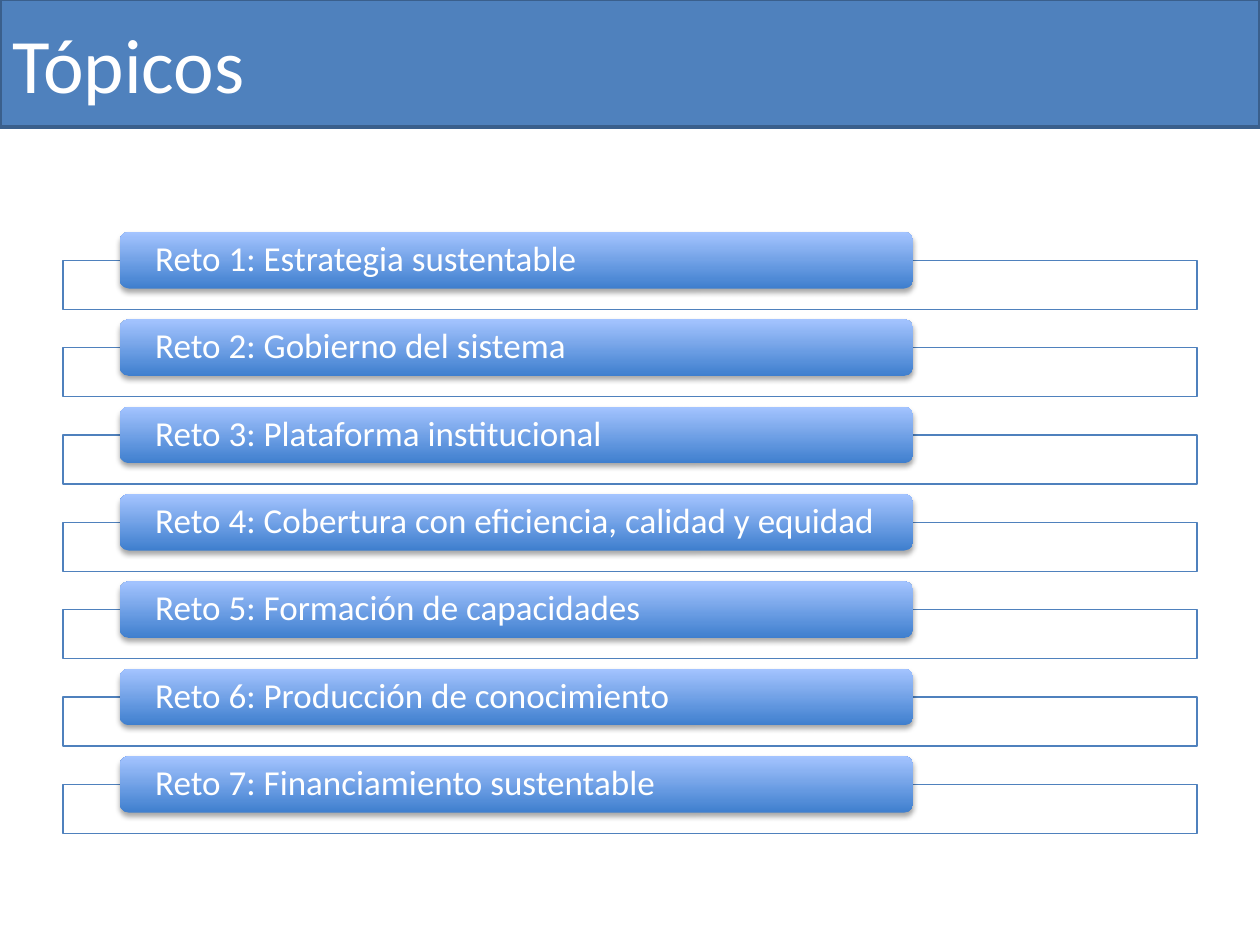
from lxml.etree import SubElement
from pptx import Presentation
from pptx.dml.color import RGBColor
from pptx.enum.shapes import MSO_SHAPE
from pptx.enum.text import MSO_ANCHOR, PP_ALIGN
from pptx.oxml.ns import qn
from pptx.util import Inches, Pt

TOPICS = [
    "Reto 1: Estrategia sustentable",
    "Reto 2: Gobierno del sistema",
    "Reto 3: Plataforma institucional",
    "Reto 4: Cobertura con eficiencia, calidad y equidad",
    "Reto 5: Formación de capacidades",
    "Reto 6: Producción de conocimiento",
    "Reto 7: Financiamiento sustentable",
]
FIRST_TOP, LAST_TOP = 1.84, 6.0
ROW = (LAST_TOP - FIRST_TOP) / (len(TOPICS) - 1)
BAR_HEIGHT = 0.45


def color(value):
    return RGBColor.from_string(value)


def add_box(kind, left, top, width, height, text="", size=20, inset=0.1):
    """Add an unshadowed shape with white, left-aligned, centred-height text."""
    box = page.shapes.add_shape(
        kind, Inches(left), Inches(top), Inches(width), Inches(height))
    box.shadow.inherit = False
    if text:
        frame = box.text_frame
        frame.text = text
        frame.word_wrap = True
        frame.vertical_anchor = MSO_ANCHOR.MIDDLE
        frame.margin_left = frame.margin_right = Inches(inset)
        frame.margin_top = frame.margin_bottom = 0
        para = frame.paragraphs[0]
        para.alignment = PP_ALIGN.LEFT
        font = para.runs[0].font
        font.name, font.size = "Calibri", Pt(size)
        font.color.rgb = color("FFFFFF")
    return box


deck = Presentation()
deck.slide_width, deck.slide_height = Inches(10), Inches(7.5)
page = deck.slides.add_slide(deck.slide_layouts[6])

title = add_box(MSO_SHAPE.RECTANGLE, 0, -0.01, 10, 1.02, "Tópicos", size=44)
title.fill.solid()
title.fill.fore_color.rgb = color("4F81BD")
title.line.color.rgb = color("3A5F8C")
title.line.width = Pt(2)

for index, topic in enumerate(TOPICS):
    top = FIRST_TOP + index * ROW

    # The outline starts at half the height of the bar
    outline = add_box(MSO_SHAPE.RECTANGLE, 0.5, top + BAR_HEIGHT / 2, 9, 0.39)
    outline.fill.solid()
    outline.fill.fore_color.rgb = color("FFFFFF")
    fill_color = outline.fill._xPr.find(".//" + qn("a:srgbClr"))
    SubElement(fill_color, qn("a:alpha"), val="90000")
    outline.line.color.rgb = color("4F81BD")
    outline.line.width = Pt(0.75)

    bar = add_box(MSO_SHAPE.ROUNDED_RECTANGLE, 0.95, top, 6.3, BAR_HEIGHT,
                  topic, inset=0.26)
    bar.text_frame.paragraphs[0].line_spacing = 0.9
    bar.line.fill.background()
    bar.fill.gradient()
    bar.fill.gradient_angle = 90
    for stop, shade in zip(bar.fill.gradient_stops, ["3F7FCE", "A4C4FF"]):
        stop.color.rgb = color(shade)

    effects = bar._element.spPr.find(qn("a:effectLst"))
    shadow = SubElement(effects, qn("a:outerShdw"), blurRad=str(Pt(3.1)),
                        dist=str(Pt(1.8)), dir="5400000", rotWithShape="0")
    shadow_color = SubElement(shadow, qn("a:srgbClr"), val="000000")
    SubElement(shadow_color, qn("a:alpha"), val="35000")

deck.save("out.pptx")
